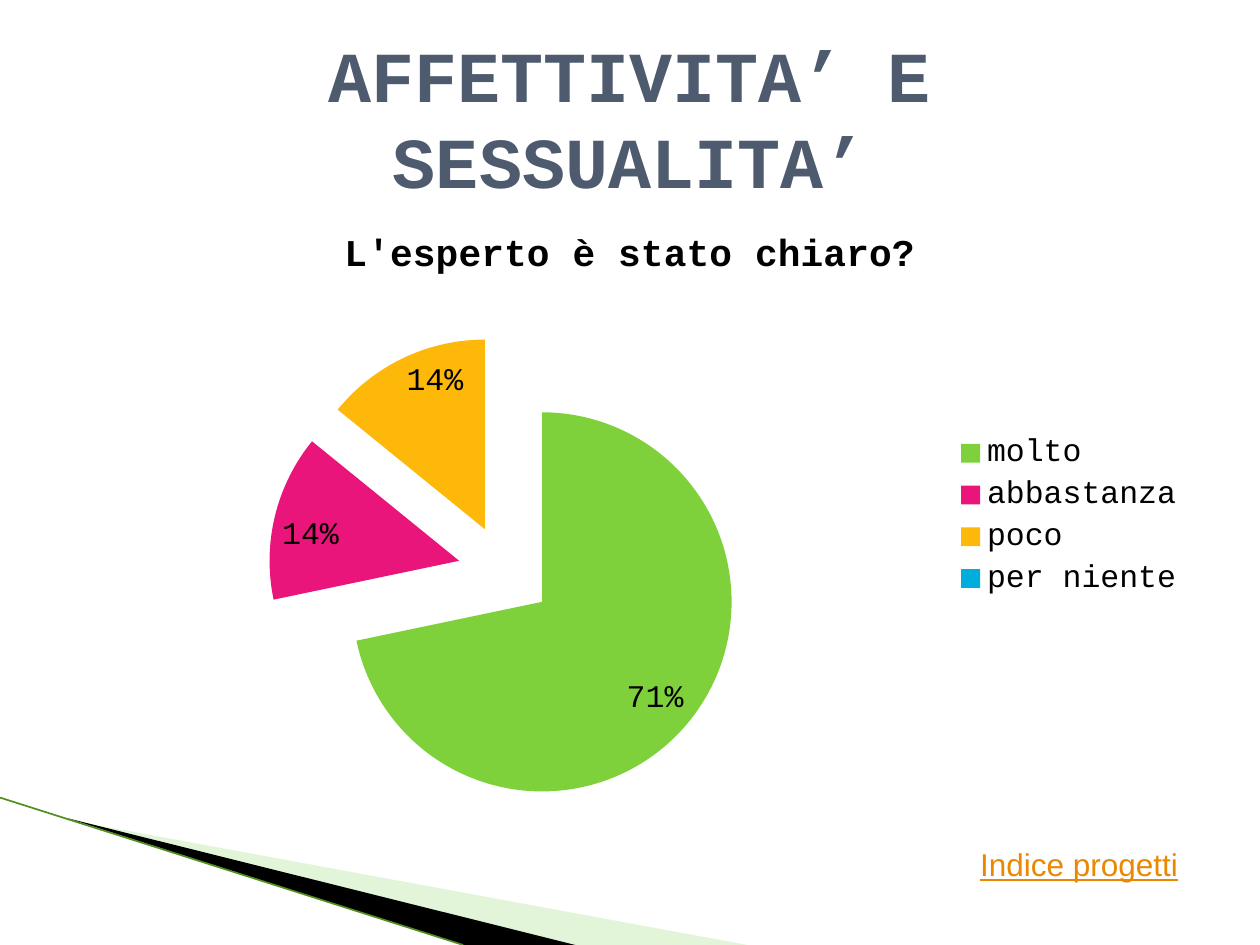
from lxml.etree import SubElement
from pptx import Presentation
from pptx.chart.data import CategoryChartData
from pptx.dml.color import RGBColor
from pptx.enum.chart import XL_CHART_TYPE as ChartType, XL_LABEL_POSITION as LabelPlace, XL_LEGEND_POSITION as LegendPlace
from pptx.enum.shapes import MSO_CONNECTOR as Connector
from pptx.enum.text import MSO_ANCHOR as Anchor, PP_ALIGN as Align
from pptx.oxml.ns import qn
from pptx.util import Inches, Pt

COLORS = {"title": "4E5B6F", "text": "000000", "link": "EB8803",
          "pale": "B8E7A1", "black": "000000", "edge": "4F8F20"}
SLICES = {"molto": (71, "7FD13B"), "abbastanza": (14, "EA157A"),
          "poco": (14, "FEB80A"), "per niente": (0, "00ADDC")}
QUESTION = "L'esperto è stato chiaro?"
MONO = "Courier New"


def rgb(value):
    """Turn a hex string into a colour."""
    return RGBColor.from_string(value)


def style_font(font, size, color, name, bold=False, underline=False):
    """Set the usual properties of a font."""
    font.size, font.name, font.bold, font.underline = Pt(size), name, bold, underline
    font.color.rgb = rgb(color)


def write(frame, text, align=Align.LEFT, anchor=Anchor.TOP, **style):
    """Fill a text frame with one formatted paragraph."""
    frame.word_wrap = True
    frame.vertical_anchor = anchor
    para = frame.paragraphs[0]
    para.alignment = align
    span = para.add_run()
    span.text = text
    style_font(span.font, **style)


def place(shape, box):
    """Move a shape to a box given in inches."""
    shape.left, shape.top, shape.width, shape.height = map(Inches, box)


def add_wedge(page, points, color, alpha=None):
    """Draw a filled outline, optionally see-through."""
    corners = [(Inches(x), Inches(y)) for x, y in points]
    builder = page.shapes.build_freeform(*corners[0])
    builder.add_line_segments(corners[1:], close=True)
    wedge = builder.convert_to_shape()
    wedge.shadow.inherit = False
    wedge.fill.solid()
    wedge.fill.fore_color.rgb = rgb(color)
    wedge.line.fill.background()
    if alpha is not None:
        fill = wedge.fill.fore_color._xFill.find(qn("a:srgbClr"))
        SubElement(fill, qn("a:alpha")).set("val", str(alpha * 1000))


def add_corner(page, box):
    """Draw the wedges and the edge line in the lower left corner."""
    left, top, width, height = box

    def at(x, y):
        return left + x * width, top + y * height

    add_wedge(page, [at(0.09, 0.15), at(1, 1), at(0.77, 1)], COLORS["pale"], 40)
    add_wedge(page, [at(0.09, 0.14), at(0.77, 1), at(0.62, 1)], COLORS["black"])
    start, end = at(0, 0), at(0.62, 1)
    edge = page.shapes.add_connector(Connector.STRAIGHT, *map(Inches, start + end))
    edge.line.color.rgb = rgb(COLORS["edge"])
    edge.line.width = Pt(0.95)
    SubElement(edge._element.spPr, qn("a:effectLst"))


def set_plot_area(chart, **shares):
    """Fix the plot area at shares of the chart's size."""
    area = chart._chartSpace.chart.plotArea
    layout = area.find(qn("c:layout"))
    if layout is None:
        layout = SubElement(area, qn("c:layout"))
        area.insert(0, layout)
    manual = SubElement(layout, qn("c:manualLayout"))
    settings = {"layoutTarget": "inner", "xMode": "edge", "yMode": "edge", **shares}
    for tag, value in settings.items():
        SubElement(manual, qn(f"c:{tag}")).set("val", str(value))


def add_pie(page, box):
    """Add the exploded pie of answers with its title and legend."""
    data = CategoryChartData()
    data.categories = list(SLICES)
    data.add_series(QUESTION, [value for value, _ in SLICES.values()])
    chart = page.shapes.add_chart(ChartType.PIE_EXPLODED, *map(Inches, box), data).chart
    style_font(chart.font, 18, COLORS["text"], MONO)
    chart.has_title = True
    write(chart.chart_title.text_frame, QUESTION, align=Align.CENTER,
          size=21.6, color=COLORS["text"], name=MONO, bold=True)
    chart.has_legend = True
    chart.legend.position = LegendPlace.RIGHT
    chart.legend.include_in_layout = False
    set_plot_area(chart, x=0.18, y=0.21, w=0.42, h=0.76)
    plot = chart.plots[0]
    plot.vary_by_categories = True
    plot.has_data_labels = True
    labels = plot.data_labels
    labels.show_value = True
    labels.number_format = '0"%";;'
    labels.number_format_is_linked = False
    labels.position = LabelPlace.INSIDE_END
    style_font(labels.font, 18, COLORS["text"], MONO)
    for index, (_, color) in enumerate(SLICES.values()):
        fill = plot.series[0].points[index].format.fill
        fill.solid()
        fill.fore_color.rgb = rgb(color)


def add_title(page, box):
    """Place and format the title placeholder."""
    title = page.shapes.title
    place(title, box)
    write(title.text_frame, "AFFETTIVITA’ E SESSUALITA’", align=Align.CENTER,
          anchor=Anchor.MIDDLE, size=41, color=COLORS["title"], name=MONO, bold=True)


def add_index_label(page, box):
    """Add the underlined label at the lower right."""
    label = page.shapes.add_textbox(*map(Inches, box))
    write(label.text_frame, "Indice progetti", size=18, color=COLORS["link"],
          name="Arial", underline=True)


def main():
    """Build and save the slide."""
    deck = Presentation()
    width, height, margin = 10, 7.5, 0.5
    deck.slide_width, deck.slide_height = Inches(width), Inches(height)
    page = deck.slides.add_slide(deck.slide_layouts[5])
    inner = width - 2 * margin
    add_corner(page, (0, 6.33, 5.93, height - 6.33))
    add_pie(page, (margin, 1.62, inner, 4.95))
    add_title(page, (margin, 0.3, inner, 1.25))
    add_index_label(page, (7.68, 6.66, 1.89, 0.4))
    deck.save("out.pptx")


if __name__ == "__main__":
    main()
